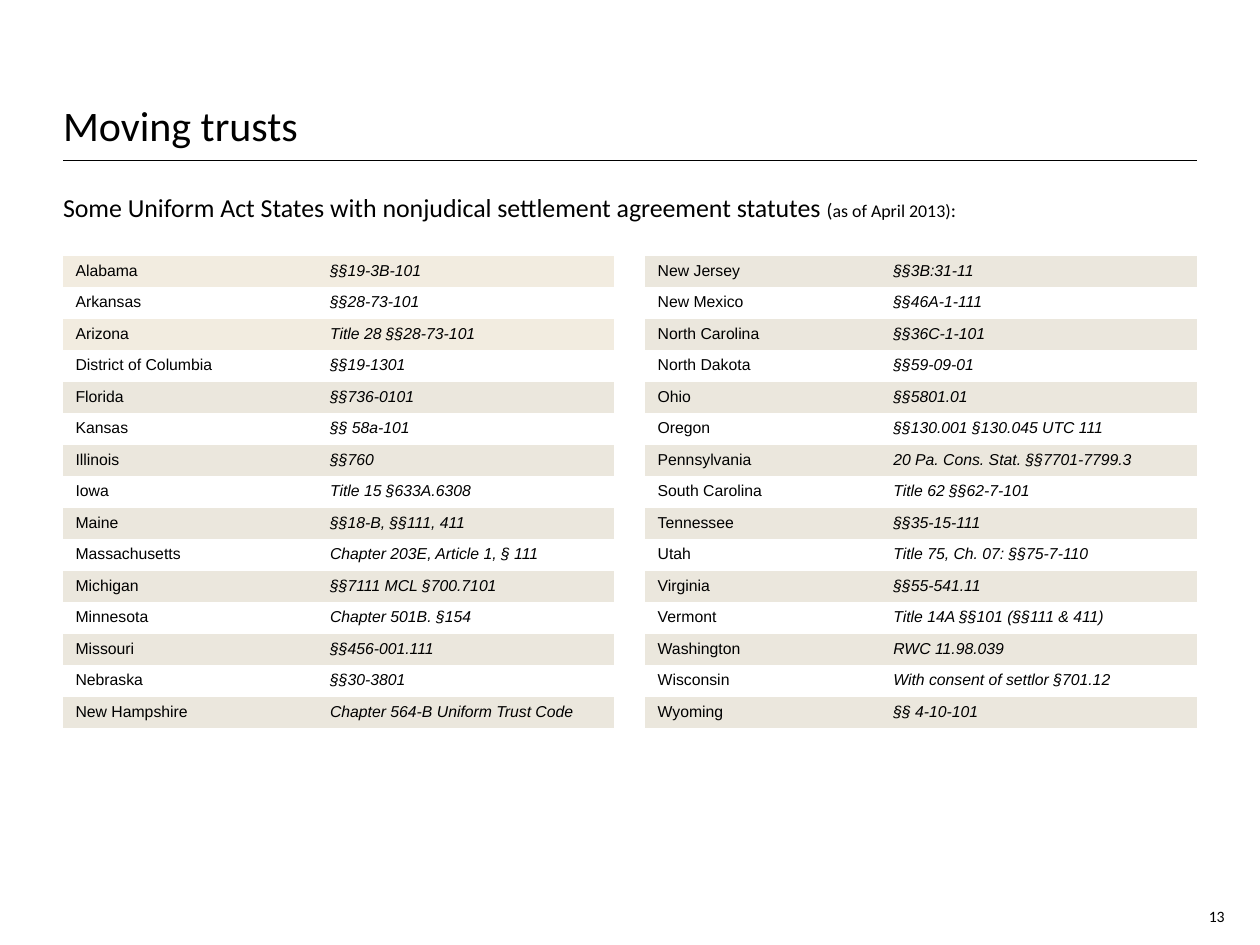
from dataclasses import dataclass

from lxml.etree import SubElement
from pptx import Presentation
from pptx.dml.color import RGBColor
from pptx.enum.shapes import MSO_CONNECTOR
from pptx.enum.text import MSO_ANCHOR as Anchor, MSO_AUTO_SIZE as AutoSize, PP_ALIGN as Align
from pptx.oxml.ns import qn
from pptx.util import Inches, Pt

TITLE = "Moving trusts"
PAGE_NUMBER = "13"


@dataclass(frozen=True)
class Theme:
    heading_font: str = "Calibri"
    table_font: str = "Arial"
    ink: str = "000000"
    paper: str = "FFFFFF"
    cream: str = "F2ECE0"
    stone: str = "EBE7DD"
    title_size: float = 24
    lead_size: float = 14.8
    bracket_size: float = 11.1
    date_size: float = 10.2
    small_size: float = 9


THEME = Theme()

LEAD = [
    ("Some Uniform Act States with nonjudical settlement agreement statutes ", THEME.lead_size),
    ("(", THEME.bracket_size),
    ("as of April 2013)", THEME.date_size),
    (":", THEME.bracket_size),
]

FIRST_STATES = [
    ("Alabama", "§§19-3B-101"),
    ("Arkansas", "§§28-73-101"),
    ("Arizona", "Title 28 §§28-73-101"),
    ("District of Columbia", "§§19-1301"),
    ("Florida", "§§736-0101"),
    ("Kansas", "§§ 58a-101"),
    ("Illinois", "§§760"),
    ("Iowa", "Title 15 §633A.6308"),
    ("Maine", "§§18-B, §§111, 411"),
    ("Massachusetts", "Chapter 203E, Article 1, § 111"),
    ("Michigan", "§§7111 MCL §700.7101"),
    ("Minnesota", "Chapter 501B. §154"),
    ("Missouri", "§§456-001.111"),
    ("Nebraska", "§§30-3801"),
    ("New Hampshire", "Chapter 564-B Uniform Trust Code"),
]
LAST_STATES = [
    ("New Jersey", "§§3B:31-11"),
    ("New Mexico", "§§46A-1-111"),
    ("North Carolina", "§§36C-1-101"),
    ("North Dakota", "§§59-09-01"),
    ("Ohio", "§§5801.01"),
    ("Oregon", "§§130.001 §130.045 UTC 111"),
    ("Pennsylvania", "20 Pa. Cons. Stat. §§7701-7799.3"),
    ("South Carolina", "Title 62 §§62-7-101"),
    ("Tennessee", "§§35-15-111"),
    ("Utah", "Title 75, Ch. 07: §§75-7-110"),
    ("Virginia", "§§55-541.11"),
    ("Vermont", "Title 14A §§101 (§§111 & 411)"),
    ("Washington", "RWC 11.98.039"),
    ("Wisconsin", "With consent of settlor §701.12"),
    ("Wyoming", "§§ 4-10-101"),
]

# left edge, column widths, number of leading rows banded in cream, statutes
TABLES = [
    (0.5, (2.02, 2.35), 3, FIRST_STATES),
    (5.12, (1.87, 2.51), 0, LAST_STATES),
]
TABLE_TOP = 2.03
ROW_HEIGHT = 0.25
PLAIN_TABLE_STYLE = "{2D5ABB26-0587-4C30-8999-92F81FD0307C}"


def add_span(para, text, size, font=THEME.heading_font, italic=False):
    span = para.add_run()
    span.text = text
    span.font.name = font
    span.font.size = Pt(size)
    span.font.italic = italic
    span.font.bold = False
    span.font.color.rgb = RGBColor.from_string(THEME.ink)


def place(box, left, top, width, height, anchor=Anchor.TOP, pad_top=0, pad_bottom=0, align=Align.LEFT):
    """Move a text shape, set its frame, and return its first paragraph."""
    box.left, box.top, box.width, box.height = map(Inches, (left, top, width, height))
    frame = box.text_frame
    frame.word_wrap = True
    frame.auto_size = AutoSize.NONE
    frame.vertical_anchor = anchor
    frame.margin_left = frame.margin_right = 0
    frame.margin_top, frame.margin_bottom = Inches(pad_top), Inches(pad_bottom)
    para = frame.paragraphs[0]
    para.alignment = align
    para.space_before = Pt(0)
    return para


def add_rule(page, left, right, top):
    rule = page.shapes.add_connector(
        MSO_CONNECTOR.STRAIGHT, Inches(left), Inches(top), Inches(right), Inches(top))
    rule.line.color.rgb = RGBColor.from_string(THEME.ink)
    rule.line.width = Pt(0.5)
    SubElement(rule._element.spPr, qn("a:effectLst"))


def add_statutes(page, left, widths, cream_rows, statutes):
    table = page.shapes.add_table(
        len(statutes), len(widths), Inches(left), Inches(TABLE_TOP),
        Inches(sum(widths)), Inches(ROW_HEIGHT * len(statutes))).table
    table.first_row = table.horz_banding = False
    table._tbl.tblPr.find(qn("a:tableStyleId")).text = PLAIN_TABLE_STYLE
    for column, width in zip(table.columns, widths):
        column.width = Inches(width)
    for row, entry in enumerate(statutes):
        table.rows[row].height = Inches(ROW_HEIGHT)
        band = THEME.cream if row < cream_rows else THEME.stone
        for col, text in enumerate(entry):
            cell = table.cell(row, col)
            cell.margin_left = cell.margin_right = Inches(0.1)
            cell.margin_top = cell.margin_bottom = Inches(0.05)
            cell.fill.solid()
            cell.fill.fore_color.rgb = RGBColor.from_string(THEME.paper if row % 2 else band)
            add_span(cell.text_frame.paragraphs[0], text, THEME.small_size,
                     font=THEME.table_font, italic=col == 1)


def main():
    deck = Presentation()
    deck.slide_width, deck.slide_height = Inches(10), Inches(7.5)
    page = deck.slides.add_slide(deck.slide_layouts[1])

    title = place(page.shapes.title, 0.5, 0.34, 9, 0.93, Anchor.BOTTOM, 0.05, 0.08)
    add_span(title, TITLE, THEME.title_size)
    add_rule(page, 0.5, 9.5, 1.27)

    lead = place(page.placeholders[1], 0.5, 1.56, 9.05, 0.24)
    lead.line_spacing = 0.85
    props = lead._p.get_or_add_pPr()
    props.set("marL", "0")
    props.set("indent", "0")
    SubElement(props, qn("a:buNone"))
    for text, size in LEAD:
        add_span(lead, text, size)

    for left, widths, cream_rows, statutes in TABLES:
        add_statutes(page, left, widths, cream_rows, statutes)

    number_box = page.shapes.add_textbox(0, 0, 0, 0)
    number = place(number_box, 9.33, 7.1, 0.39, 0.25, Anchor.BOTTOM, align=Align.RIGHT)
    add_span(number, PAGE_NUMBER, THEME.small_size)

    deck.save("out.pptx")


if __name__ == "__main__":
    main()
